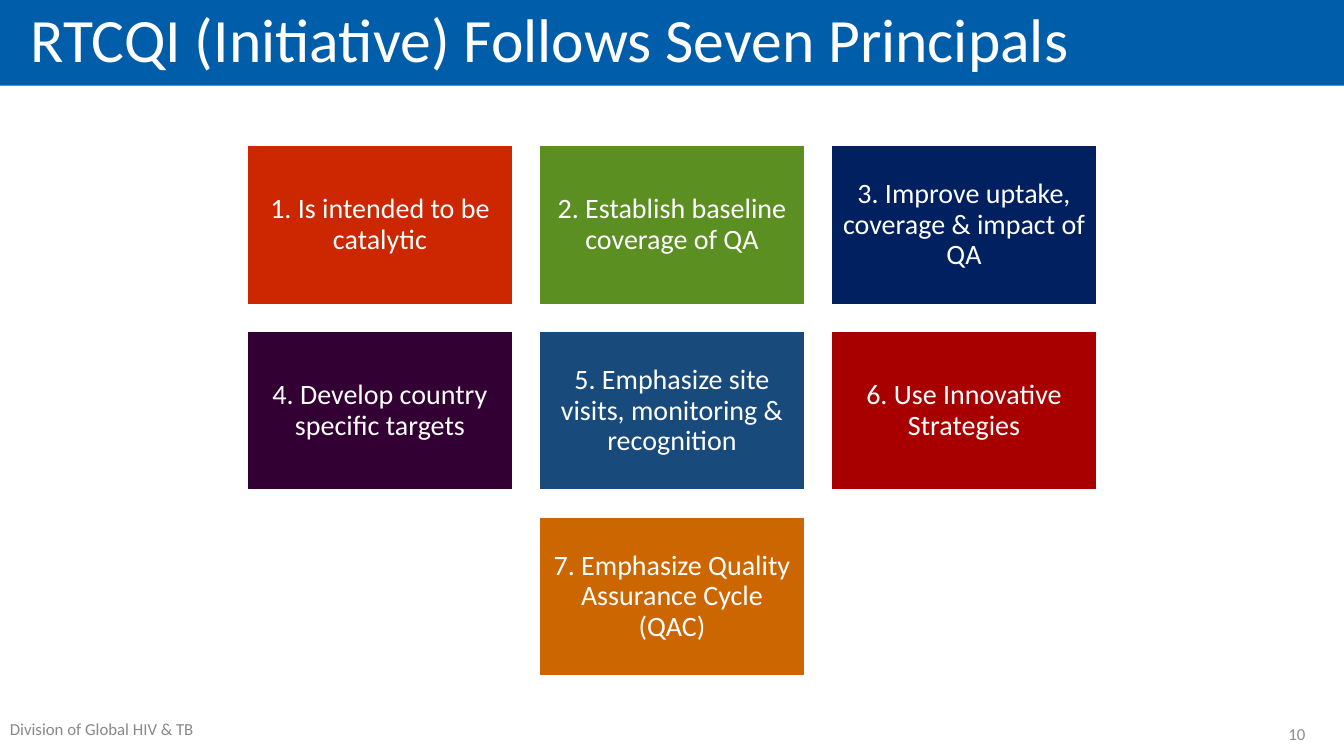
import pptx
import pptx.dml.color
import pptx.enum.shapes
import pptx.enum.text
import pptx.util

Pt = pptx.util.Pt
RGBColor = pptx.dml.color.RGBColor
ALIGN = pptx.enum.text.PP_ALIGN
ANCHOR = pptx.enum.text.MSO_ANCHOR

FONT = "Calibri"
WHITE = RGBColor(0xFF, 0xFF, 0xFF)
BLUE = RGBColor(0x00, 0x5D, 0xAA)
FOOTER_GRAY = RGBColor(0x89, 0x89, 0x89)
NUMBER_GRAY = RGBColor(0x8C, 0x8C, 0x8C)
RED = RGBColor(0xCC, 0x27, 0x00)
GREEN = RGBColor(0x5B, 0x8F, 0x22)
NAVY = RGBColor(0x00, 0x20, 0x60)
PURPLE = RGBColor(0x32, 0x00, 0x32)
STEEL = RGBColor(0x18, 0x4A, 0x7C)
CRIMSON = RGBColor(0xA8, 0x00, 0x00)
ORANGE = RGBColor(0xCC, 0x66, 0x00)

SLIDE_WIDTH, SLIDE_HEIGHT = 960, 540
BOX_WIDTH, BOX_HEIGHT, GAP = 189.6, 113.8, 19
GRID_TOP = 103.8

PRINCIPLE_ROWS = [
    [
        ("1. Is intended to be catalytic", RED),
        ("2. Establish baseline coverage of QA", GREEN),
        ("3. Improve uptake, coverage & impact of QA", NAVY),
    ],
    [
        ("4. Develop country specific targets", PURPLE),
        ("5. Emphasize site visits, monitoring & recognition", STEEL),
        ("6. Use Innovative Strategies", CRIMSON),
    ],
    [("7. Emphasize Quality Assurance Cycle (QAC)", ORANGE)],
]


def write_text(shape, text, size, color, alignment, anchor, margins, line_spacing=1.0):
    frame = shape.text_frame
    frame.text = text
    frame.word_wrap = True
    frame.auto_size = pptx.enum.text.MSO_AUTO_SIZE.NONE
    frame.vertical_anchor = anchor
    frame.margin_left = frame.margin_right = Pt(margins[0])
    frame.margin_top = frame.margin_bottom = Pt(margins[1])
    paragraph = frame.paragraphs[0]
    paragraph.alignment = alignment
    paragraph.line_spacing = line_spacing
    paragraph.font.name = FONT
    paragraph.font.size = Pt(size)
    paragraph.font.color.rgb = color


def format_title(slide, text):
    title = slide.shapes.title
    title.left, title.top = Pt(0), Pt(-0.7)
    title.width, title.height = Pt(SLIDE_WIDTH), Pt(61.9)
    title.fill.solid()
    title.fill.fore_color.rgb = BLUE
    write_text(title, text, 44, WHITE, ALIGN.LEFT, ANCHOR.MIDDLE, (21.6, 3.6), 0.9)


def add_footer_text(slide, text, left, width, color, alignment, anchor):
    box = slide.shapes.add_textbox(Pt(left), Pt(509.8), Pt(width), Pt(28.8))
    write_text(box, text, 12, color, alignment, anchor, (7.2, 3.6))


def add_principle(slide, text, color, left, top):
    box = slide.shapes.add_shape(
        pptx.enum.shapes.MSO_SHAPE.RECTANGLE,
        Pt(left), Pt(top), Pt(BOX_WIDTH), Pt(BOX_HEIGHT),
    )
    box.shadow.inherit = False
    box.fill.solid()
    box.fill.fore_color.rgb = color
    box.line.color.rgb = WHITE
    box.line.width = Pt(1.5)
    write_text(box, text, 20, WHITE, ALIGN.CENTER, ANCHOR.MIDDLE, (6, 6), 0.9)


def add_principle_grid(slide):
    for row_index, row in enumerate(PRINCIPLE_ROWS):
        row_width = len(row) * (BOX_WIDTH + GAP) - GAP
        row_left = (SLIDE_WIDTH - row_width) / 2
        top = GRID_TOP + row_index * (BOX_HEIGHT + GAP)
        for column, (text, color) in enumerate(row):
            add_principle(slide, text, color, row_left + column * (BOX_WIDTH + GAP), top)


def main():
    presentation = pptx.Presentation()
    presentation.slide_width = Pt(SLIDE_WIDTH)
    presentation.slide_height = Pt(SLIDE_HEIGHT)
    slide = presentation.slides.add_slide(presentation.slide_layouts[5])
    format_title(slide, "RTCQI (Initiative) Follows Seven Principals")
    add_footer_text(slide, "Division of Global HIV & TB", 0, 156.2, FOOTER_GRAY, ALIGN.LEFT, ANCHOR.TOP)
    add_footer_text(slide, "10", 856.8, 82.8, NUMBER_GRAY, ALIGN.RIGHT, ANCHOR.MIDDLE)
    add_principle_grid(slide)
    presentation.save("out.pptx")


if __name__ == "__main__":
    main()
